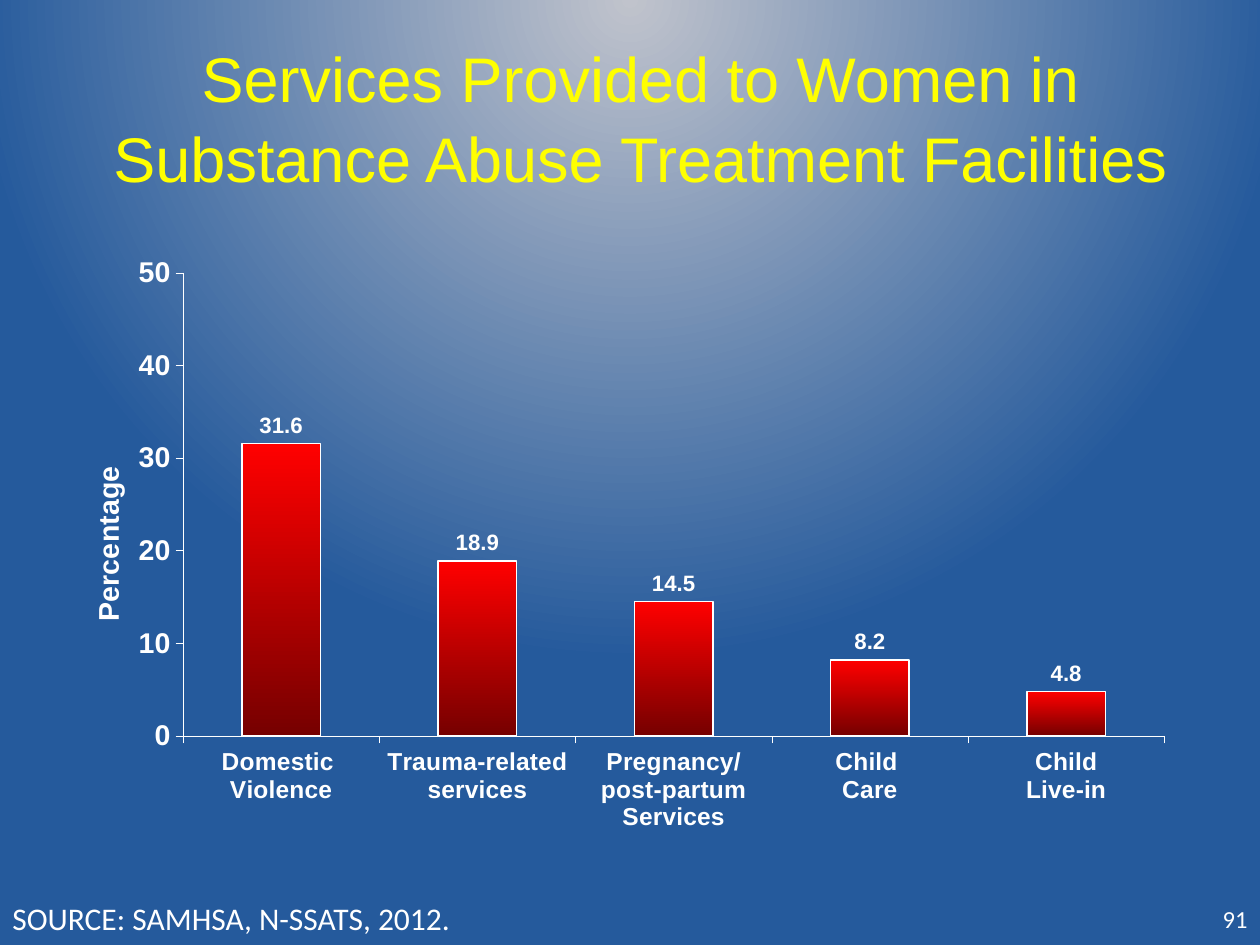
from typing import NamedTuple

import pptx
import pptx.chart.data
import pptx.dml.color
import pptx.enum.chart
import pptx.enum.text
import pptx.oxml
import pptx.oxml.ns
import pptx.util

Pt = pptx.util.Pt
Align = pptx.enum.text.PP_ALIGN
Anchor = pptx.enum.text.MSO_ANCHOR
Enum = pptx.enum.chart
qn = pptx.oxml.ns.qn
SPACE = pptx.oxml.ns.nsdecls("a", "c")
WHITE = "FFFFFF"


class Box(NamedTuple):
    left: float
    top: float
    width: float
    height: float

    def points(self) -> list:
        return [Pt(side) for side in self]


class Bar(NamedTuple):
    name: str
    value: float


BARS = [
    Bar("Domestic \nViolence", 31.6),
    Bar("Trauma-related \nservices", 18.9),
    Bar("Pregnancy/\npost-partum Services", 14.5),
    Bar("Child \nCare", 8.2),
    Bar("Child\nLive-in", 4.8),
]


def color(code: str) -> pptx.dml.color.RGBColor:
    return pptx.dml.color.RGBColor.from_string(code)


def style(font, size: float, name: str = "Arial", code: str = WHITE,
          bold: bool = False) -> None:
    font.size, font.name, font.bold = Pt(size), name, bold
    font.color.rgb = color(code)


def outline(line, width: float) -> None:
    line.color.rgb = color(WHITE)
    line.width = Pt(width)


def blend(fill, root, stops: list, shade: str) -> None:
    """Give a fill its gradient stops (percent, colour) and direction."""
    fill.gradient()
    old = next(root.iter(qn("a:gradFill")))
    marks = "".join(
        f'<a:gs pos="{spot * 1000}"><a:srgbClr val="{code}"/></a:gs>'
        for spot, code in stops)
    new = pptx.oxml.parse_xml(
        f'<a:gradFill {SPACE} rotWithShape="1"><a:gsLst>{marks}</a:gsLst>'
        f'{shade}</a:gradFill>')
    old.getparent().replace(old, new)


def write(slide, text: str, box: Box, *, size: float, name: str = "Calibri",
          code: str = WHITE, align=Align.LEFT, anchor=Anchor.TOP,
          space: float = 1.0) -> None:
    frame = slide.shapes.add_textbox(*box.points()).text_frame
    frame.word_wrap = True
    frame.vertical_anchor = anchor
    para = frame.paragraphs[0]
    para.alignment, para.line_spacing = align, space
    run = para.add_run()
    run.text = text
    style(run.font, size, name, code)


def place(chart, box: Box) -> None:
    """Fix the inner plot area, as shares of the chart."""
    area = next(chart.element.iter(qn("c:plotArea")))
    for old in area.findall(qn("c:layout")):
        area.remove(old)
    sides = "".join(f'<c:{key} val="{share}"/>'
                    for key, share in zip("xywh", box))
    area.insert(0, pptx.oxml.parse_xml(
        f'<c:layout {SPACE}><c:manualLayout><c:layoutTarget val="inner"/>'
        f'<c:xMode val="edge"/><c:yMode val="edge"/>{sides}'
        f'</c:manualLayout></c:layout>'))


def graph(slide, bars: list, box: Box) -> None:
    data = pptx.chart.data.CategoryChartData(number_format="0.0")
    data.categories = [bar.name for bar in bars]
    data.add_series("Series 1", [bar.value for bar in bars])
    chart = slide.shapes.add_chart(
        Enum.XL_CHART_TYPE.COLUMN_CLUSTERED, *box.points(), data).chart
    chart.has_legend = chart.has_title = False
    style(chart.font, 16.3, bold=True)
    place(chart, Box(0.09, 0.07, 0.89, 0.77))

    # Axes
    for axis, size in ((chart.category_axis, 14), (chart.value_axis, 16.3)):
        axis.has_major_gridlines = False
        axis.major_tick_mark = Enum.XL_TICK_MARK.OUTSIDE
        axis.minor_tick_mark = Enum.XL_TICK_MARK.NONE
        style(axis.tick_labels.font, size, bold=True)
        outline(axis.format.line, 0.23)
    scale = chart.value_axis
    scale.minimum_scale, scale.maximum_scale, scale.major_unit = 0, 50, 10
    scale.tick_labels.number_format = "0"
    scale.tick_labels.number_format_is_linked = False
    title = scale.axis_title.text_frame
    title.text = "Percentage"
    style(title.paragraphs[0].runs[0].font, 16.3, bold=True)

    # Columns and their values
    plot = chart.plots[0]
    plot.gap_width, plot.vary_by_categories = 150, False
    series = plot.series[0]
    blend(series.format.fill, series._element,
          [(0, "FF0000"), (100, "760000")], '<a:lin ang="5400000" scaled="0"/>')
    outline(series.format.line, 0.91)
    plot.has_data_labels = True
    labels = plot.data_labels
    labels.show_value = True
    labels.number_format, labels.number_format_is_linked = "0.0", False
    labels.position = Enum.XL_LABEL_POSITION.OUTSIDE_END
    style(labels.font, 12.7, bold=True)


def main() -> None:
    deck = pptx.Presentation()
    deck.slide_width, deck.slide_height = Pt(720), Pt(540)
    slide = deck.slides.add_slide(deck.slide_layouts[6])

    # Background glow from above the top edge
    blend(slide.background.fill, slide.element,
          [(0, "C0C3CC"), (84, "255A9C"), (100, "255A9C")],
          '<a:path path="circle"><a:fillToRect l="50000" t="-80000" '
          'r="50000" b="180000"/></a:path>')

    # Title
    write(slide, "Services Provided to Women in Substance Abuse Treatment "
          "Facilities", Box(30, 12, 672, 108), size=36, name="Arial",
          code="FFFF00", align=Align.CENTER, anchor=Anchor.MIDDLE, space=1.05)

    # Chart
    graph(slide, BARS, Box(48, 132, 630, 343.5))

    # Footer
    write(slide, "91", Box(552, 510.5, 168, 29), size=14,
          align=Align.RIGHT, anchor=Anchor.MIDDLE)
    write(slide, "SOURCE: SAMHSA, N-SSATS, 2012.", Box(0, 510, 528, 29),
          size=18)

    deck.save("out.pptx")


if __name__ == "__main__":
    main()
